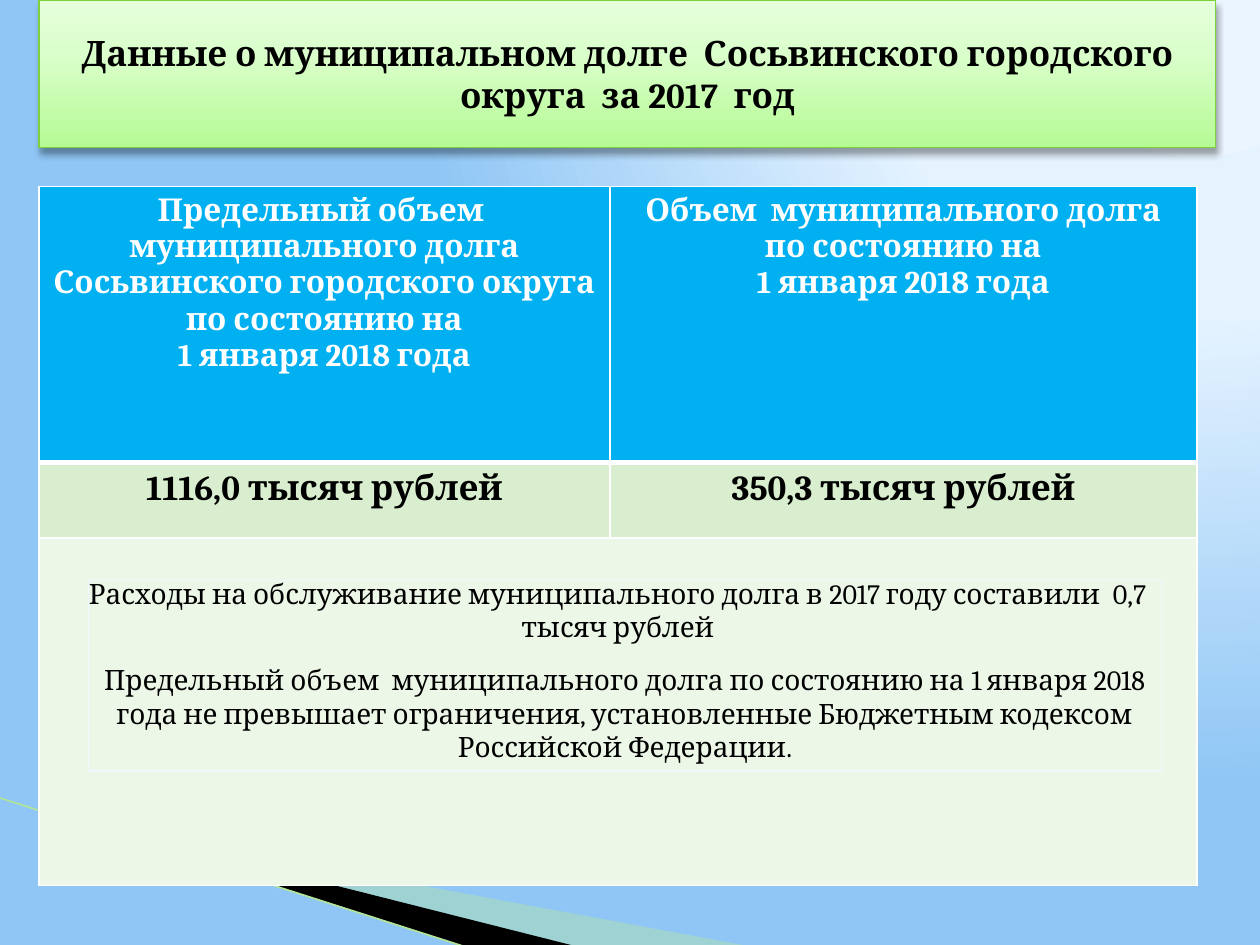
from dataclasses import dataclass

from pptx import Presentation
from pptx.dml.color import RGBColor
from pptx.enum.shapes import MSO_CONNECTOR, MSO_SHAPE
from pptx.enum.text import MSO_ANCHOR, PP_ALIGN
from pptx.oxml import parse_xml
from pptx.oxml.ns import nsdecls, qn
from pptx.util import Inches, Pt


@dataclass(frozen=True)
class Theme:
    """Colours, type sizes and font of the slide."""
    font: str = "Cambria"
    ink: str = "000000"
    white: str = "FFFFFF"
    head: str = "00B0F0"
    band: str = "D8EECE"
    pale: str = "ECF7E8"
    leaf: str = "B8E7A1"
    vine: str = "B1E399"
    edge: str = "7FD13B"
    frame: str = "EFF7FF"
    sky: tuple = ((0, "EAF5FF"), (40, "E5F3FF"), (100, "8FC6F5"))
    lime: tuple = ((0, "B5FA95"), (65, "DBFFCC"), (100, "E5FFDB"))
    big: int = 20
    mid: int = 18
    small: int = 16


THEME = Theme()
COLS, ROWS = 100, 75
WIDE, HIGH = Inches(10), Inches(7.5)


def col(n):
    """Length of n grid columns."""
    return round(WIDE * n / COLS)


def row(n):
    """Length of n grid rows."""
    return round(HIGH * n / ROWS)


def place(box):
    """Turn a grid box into slide lengths."""
    left, top, wide, high = box
    return col(left), row(top), col(wide), row(high)


def rgb(tone):
    """Colour from its hex code."""
    return RGBColor.from_string(tone)


def xml(tag, body="", attrs=""):
    """Build one drawing element."""
    return parse_xml(f"<a:{tag} {nsdecls('a')} {attrs}>{body}</a:{tag}>")


def blend(owner, fill, stops, way):
    """Give a fill its gradient stops and direction."""
    fill.gradient()
    old = owner.find(".//" + qn("a:gradFill"))
    body = "".join(f'<a:gs pos="{pos * 1000}"><a:srgbClr val="{tone}"/></a:gs>'
                   for pos, tone in stops)
    new = xml("gradFill", f"<a:gsLst>{body}</a:gsLst>{way}", 'rotWithShape="1"')
    old.getparent().replace(old, new)


def write(frame, lines, size=THEME.mid, tone=THEME.ink, bold=False):
    """Fill a text frame with centred paragraphs."""
    frame.word_wrap = True
    for i, line in enumerate(lines):
        para = frame.paragraphs[0] if i == 0 else frame.add_paragraph()
        para.alignment = PP_ALIGN.CENTER
        run = para.add_run()
        run.text = line
        font = run.font
        font.name, font.size, font.bold = THEME.font, Pt(size), bold
        font.color.rgb = rgb(tone)


def panel(slide, box, tone):
    """Add a thinly outlined rectangle."""
    shape = slide.shapes.add_shape(MSO_SHAPE.RECTANGLE, *place(box))
    shape.shadow.inherit = False
    shape.fill.background()
    shape.line.color.rgb = rgb(tone)
    shape.line.width = Pt(0.75)
    return shape


def wedge(slide, points, tone, alpha=100):
    """Add a closed sliver through grid points."""
    start, *rest = [(col(x), row(y)) for x, y in points]
    maker = slide.shapes.build_freeform(*start)
    maker.add_line_segments(rest, close=True)
    shape = maker.convert_to_shape()
    shape.shadow.inherit = False
    shape.line.fill.background()
    shape.fill.solid()
    shape.fill.fore_color.rgb = rgb(tone)
    if alpha < 100:
        clr = shape.element.spPr.find(".//" + qn("a:srgbClr"))
        clr.append(xml("alpha", attrs=f'val="{alpha * 1000}"'))


def scene(slide):
    """Paint the sky and the corner ribbons."""
    way = ('<a:path path="circle"><a:fillToRect l="95000" t="-106000" '
           'r="5000" b="206000"/></a:path>')
    blend(slide.element, slide.background.fill, THEME.sky, way)
    wedge(slide, [(5.5, 65.1), (59.5, 75.1), (45.6, 75.1), (5.5, 65)],
          THEME.leaf, 40)
    wedge(slide, [(5.3, 64.9), (45.7, 75.1), (37.2, 75.2), (5.4, 65)], THEME.ink)
    line = slide.shapes.add_connector(MSO_CONNECTOR.STRAIGHT, col(-0.1),
                                      row(63.3), col(37.1), row(75.2))
    line.line.color.rgb = rgb(THEME.vine)
    line.line.width = Pt(0.95)
    line.element.spPr.append(xml("effectLst"))


def title(slide, box, words):
    """Add the shaded title bar."""
    shape = panel(slide, box, THEME.edge)
    blend(shape.element, shape.fill, THEME.lime, '<a:lin ang="16200000" scaled="0"/>')
    glow = shape.element.spPr.find(qn("a:effectLst"))
    glow.append(xml("outerShdw",
                    '<a:srgbClr val="000000"><a:alpha val="35000"/></a:srgbClr>',
                    f'blurRad="{Pt(4)}" dist="{Pt(3)}" dir="5400000" rotWithShape="0"'))
    shape.text_frame.vertical_anchor = MSO_ANCHOR.MIDDLE
    write(shape.text_frame, [words], size=THEME.big, bold=True)


def trim(cell, tone, top=1, base=1):
    """Set a cell's fill and white borders."""
    cell.fill.solid()
    cell.fill.fore_color.rgb = rgb(tone)
    props = cell._tc.get_or_add_tcPr()
    sides = (("L", 1), ("R", 1), ("T", top), ("B", base))
    for i, (side, wide) in enumerate(sides):
        body = f'<a:solidFill><a:srgbClr val="{THEME.white}"/></a:solidFill>'
        props.insert(i, xml("ln" + side, body, f'w="{Pt(wide)}"'))


def debt(slide, box, heads, sums, note):
    """Add the debt table with its merged note row."""
    grid = slide.shapes.add_table(3, 2, *place(box)).table
    wide, high = box[2:]
    for part, share in zip(grid.columns, (0.493, 0.507)):
        part.width = col(wide * share)
    for part, share in zip(grid.rows, (0.395, 0.108, 0.497)):
        part.height = row(high * share)
    for i, (head, total) in enumerate(zip(heads, sums)):
        trim(grid.cell(0, i), THEME.head, base=3)
        trim(grid.cell(1, i), THEME.band, top=3)
        trim(grid.cell(2, i), THEME.pale)
        write(grid.cell(0, i).text_frame, head, tone=THEME.white, bold=True)
        write(grid.cell(1, i).text_frame, [total], size=THEME.big, bold=True)
    last = grid.cell(2, 0)
    last.merge(grid.cell(2, 1))
    last.margin_top = row(3.3)
    write(last.text_frame, [note], size=THEME.small)


def limit(slide, box, words):
    """Add the framed remark on the debt limit."""
    shape = panel(slide, box, THEME.frame)
    shape.text_frame.vertical_anchor = MSO_ANCHOR.TOP
    shape.text_frame.margin_top = row(6.5)
    write(shape.text_frame, [words], size=THEME.small)


def main():
    """Build and save the slide."""
    deck = Presentation()
    deck.slide_width, deck.slide_height = WIDE, HIGH
    slide = deck.slides.add_slide(deck.slide_layouts[6])
    date = "1 января 2018 года"
    scene(slide)
    debt(slide, (3.1, 14.8, 91.9, 55.5),
         [["Предельный объем  муниципального долга Сосьвинского городского "
           "округа по состоянию на", date],
          ["Объем  муниципального долга по состоянию на", date]],
         ["1116,0 тысяч рублей", "350,3 тысяч рублей"],
         "Расходы на обслуживание муниципального долга в 2017 году "
         "составили  0,7 тысяч рублей")
    title(slide, (3.1, 0, 93.4, 11.7),
          "Данные о муниципальном долге  Сосьвинского городского округа  "
          "за 2017  год")
    limit(slide, (7, 46.1, 85.2, 15.1),
          "Предельный объем  муниципального долга по состоянию на 1 января "
          "2018 года не превышает ограничения, установленные Бюджетным "
          "кодексом Российской Федерации.")
    deck.save("out.pptx")


if __name__ == "__main__":
    main()
